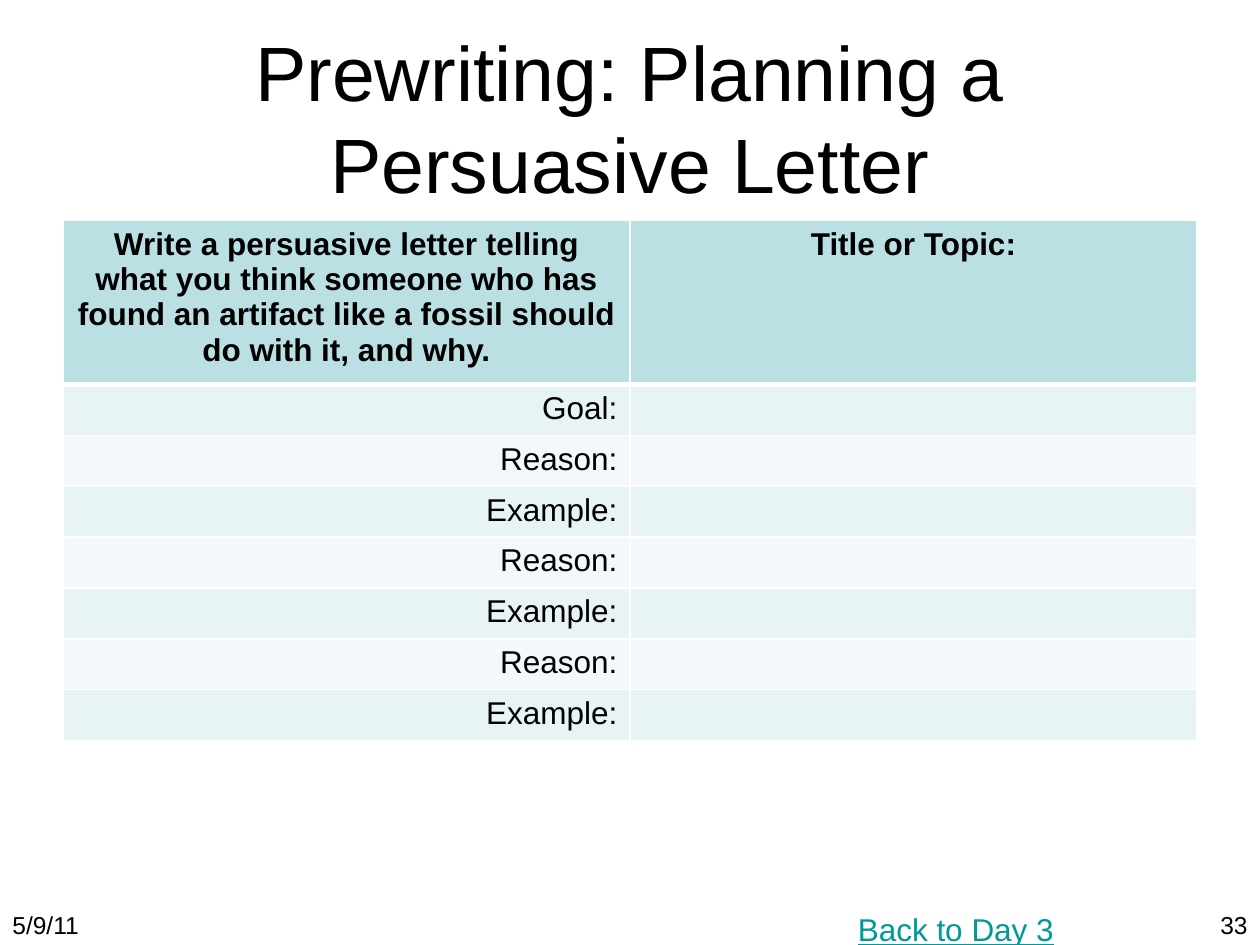
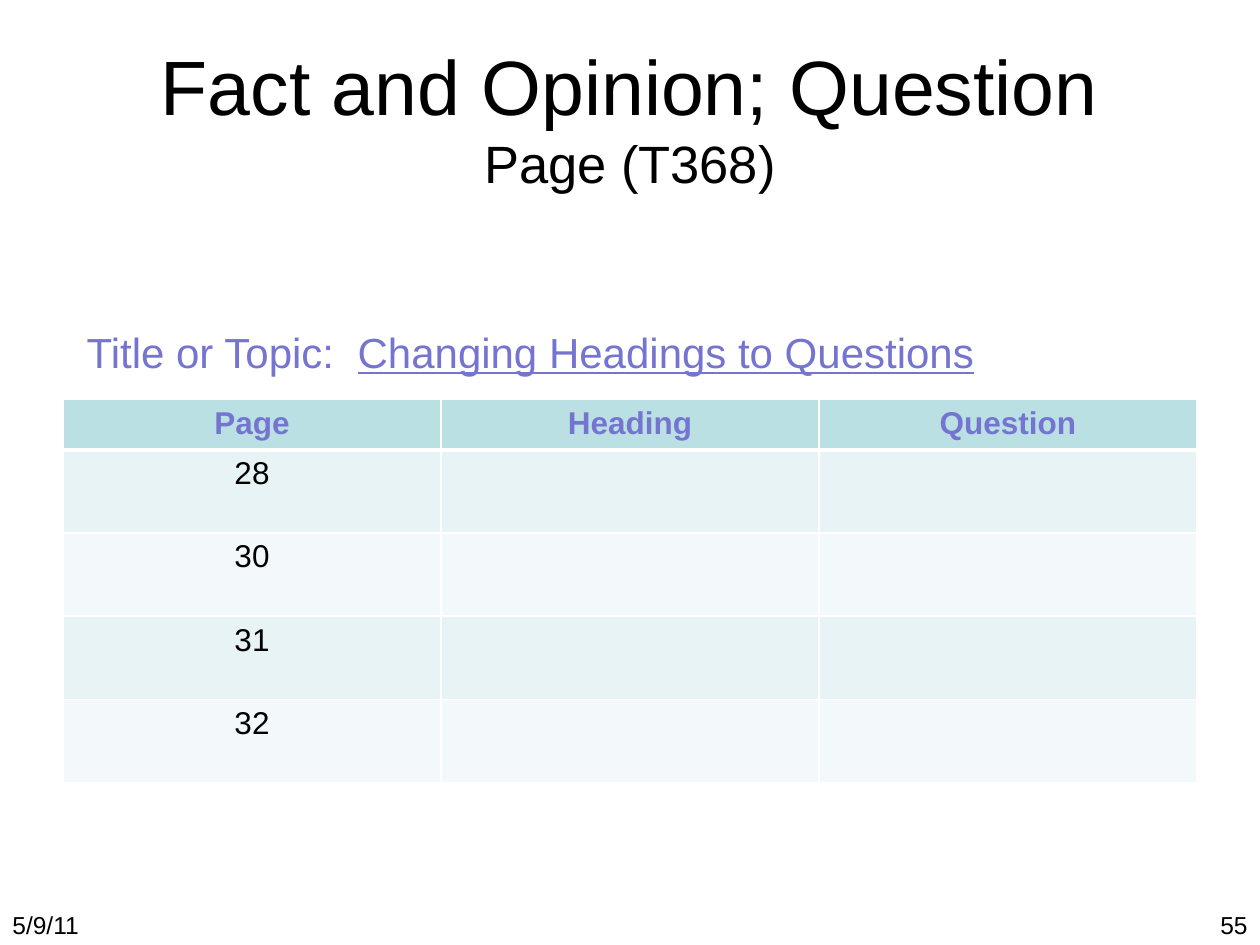
from dataclasses import dataclass

from lxml.etree import SubElement
from pptx import Presentation
from pptx.dml.color import RGBColor
from pptx.enum.text import MSO_ANCHOR, MSO_AUTO_SIZE, PP_ALIGN
from pptx.oxml.ns import qn
from pptx.util import Emu, Inches, Pt


@dataclass(frozen=True)
class Theme:
    font: str = "Arial"
    ink: str = "000000"
    accent: str = "7575D1"
    link: str = "009999"
    header_fill: str = "BBE0E3"
    band_fills: tuple = ("E7F3F4", "F3F9FA")
    border: str = "FFFFFF"
    title_size: int = 44
    subtitle_size: int = 30
    topic_size: int = 24
    body_size: int = 18
    footer_size: int = 14


@dataclass(frozen=True)
class Box:
    column: float
    row: float
    columns: float
    rows: float

    def place(self):
        return (across(self.column), down(self.row),
                across(self.columns), down(self.rows))


THEME = Theme()
SLIDE_WIDTH, SLIDE_HEIGHT = Inches(10), Inches(7.5)
GRID_COLUMNS, GRID_ROWS = 20, 30
TITLE_BOX = Box(1, 1.2, 18, 5)
FOOTER_BOX = Box(0, 28.68, 20, 1.32)


def across(columns):
    return Emu(round(SLIDE_WIDTH * columns / GRID_COLUMNS))


def down(rows):
    return Emu(round(SLIDE_HEIGHT * rows / GRID_ROWS))


def format_run(run, size, color=THEME.ink, bold=False, underline=False):
    run.font.name = THEME.font
    run.font.size = Pt(size)
    run.font.color.rgb = RGBColor.from_string(color)
    run.font.bold = bold
    run.font.underline = underline


def add_text(slide, box, text, size, color=THEME.ink,
             alignment=PP_ALIGN.LEFT, underline=False):
    text_box = slide.shapes.add_textbox(*box.place())
    text_box.text_frame.word_wrap = True
    text_box.text_frame.text = text
    paragraph = text_box.text_frame.paragraphs[0]
    paragraph.alignment = alignment
    for run in paragraph.runs:
        format_run(run, size, color, underline=underline)
    return paragraph


def add_title(slide, box, heading, subtitle=None):
    title = slide.shapes.title
    title.left, title.top, title.width, title.height = box.place()
    frame = title.text_frame
    frame.auto_size = MSO_AUTO_SIZE.NONE
    frame.vertical_anchor = MSO_ANCHOR.MIDDLE
    frame.text = heading
    paragraph = frame.paragraphs[0]
    paragraph.alignment = PP_ALIGN.CENTER
    format_run(paragraph.runs[0], THEME.title_size)
    if subtitle:
        paragraph.add_line_break()
        run = paragraph.add_run()
        run.text = subtitle
        format_run(run, THEME.subtitle_size)


def add_footer(slide, box, date, number):
    date_box = Box(box.column, box.row, 3.16, box.rows)
    number_box = Box(box.column + box.columns - 2.66, box.row, 2.66, box.rows)
    add_text(slide, date_box, date, THEME.footer_size)
    add_text(slide, number_box, number, THEME.footer_size,
             alignment=PP_ALIGN.RIGHT)


def set_borders(cell, top, bottom):
    properties = cell._tc.get_or_add_tcPr()
    for side, width in (("L", 1), ("R", 1), ("T", top), ("B", bottom)):
        line = SubElement(properties, qn(f"a:ln{side}"), w=str(Pt(width)))
        fill = SubElement(line, qn("a:solidFill"))
        SubElement(fill, qn("a:srgbClr"), val=THEME.border)


def add_worksheet(slide, box, headers, labels, header_rows,
                  header_color, label_alignment):
    table = slide.shapes.add_table(
        len(labels) + 1, len(headers), *box.place()).table
    for column in table.columns:
        column.width = across(box.columns / len(headers))
    label_rows = (box.rows - header_rows) / len(labels)
    contents = [headers] + [[label] + [""] * (len(headers) - 1)
                            for label in labels]
    for index, texts in enumerate(contents):
        is_header = index == 0
        table.rows[index].height = down(header_rows if is_header else label_rows)
        fill = THEME.header_fill if is_header else THEME.band_fills[(index - 1) % 2]
        for cell, text in zip(table.rows[index].cells, texts):
            set_borders(cell, 3 if index == 1 else 1, 3 if is_header else 1)
            cell.fill.solid()
            cell.fill.fore_color.rgb = RGBColor.from_string(fill)
            cell.text_frame.text = text
            paragraph = cell.text_frame.paragraphs[0]
            paragraph.alignment = PP_ALIGN.CENTER if is_header else label_alignment
            for run in paragraph.runs:
                format_run(run, THEME.body_size,
                           header_color if is_header else THEME.ink, is_header)


def add_topic(slide, box, label, topic):
    paragraph = add_text(slide, box, f"{label}\t", THEME.topic_size, THEME.accent)
    stops = SubElement(paragraph._p.get_or_add_pPr(), qn("a:tabLst"))
    SubElement(stops, qn("a:tab"), pos=str(across(4.3)), algn="l")
    run = paragraph.add_run()
    run.text = topic
    format_run(run, THEME.topic_size, THEME.accent, underline=True)


def start_slide(presentation, heading, number, subtitle=None):
    slide = presentation.slides.add_slide(presentation.slide_layouts[5])
    add_title(slide, TITLE_BOX, heading, subtitle)
    add_footer(slide, FOOTER_BOX, "5/9/11", number)
    return slide


def build_letter_plan(presentation):
    slide = start_slide(
        presentation, "Prewriting: Planning a Persuasive Letter", "33")
    headers = [
        "Write a persuasive letter telling what you think someone who has "
        "found an artifact like a fossil should do with it, and why.",
        "Title or Topic:",
    ]
    labels = ["Goal:"] + ["Reason:", "Example:"] * 3
    add_worksheet(slide, Box(1, 7, 18, 16.2), headers, labels, 4.88,
                  THEME.ink, PP_ALIGN.RIGHT)
    add_text(slide, Box(13.42, 28.68, 3.6, 1.6), "Back to Day 3",
             THEME.body_size, THEME.link, underline=True)


def build_heading_questions(presentation):
    slide = start_slide(
        presentation, "Fact and Opinion; Question", "55", "Page (T368)")
    add_worksheet(slide, Box(1, 12.68, 18, 12.16),
                  ["Page", "Heading", "Question"], ["28", "30", "31", "32"],
                  1.6, THEME.accent, PP_ALIGN.CENTER)
    add_topic(slide, Box(1.18, 10.16, 15, 2),
              "Title or Topic:", "Changing Headings to Questions")


def main():
    presentation = Presentation()
    presentation.slide_width = SLIDE_WIDTH
    presentation.slide_height = SLIDE_HEIGHT
    build_letter_plan(presentation)
    build_heading_questions(presentation)
    presentation.save("out.pptx")


if __name__ == "__main__":
    main()
